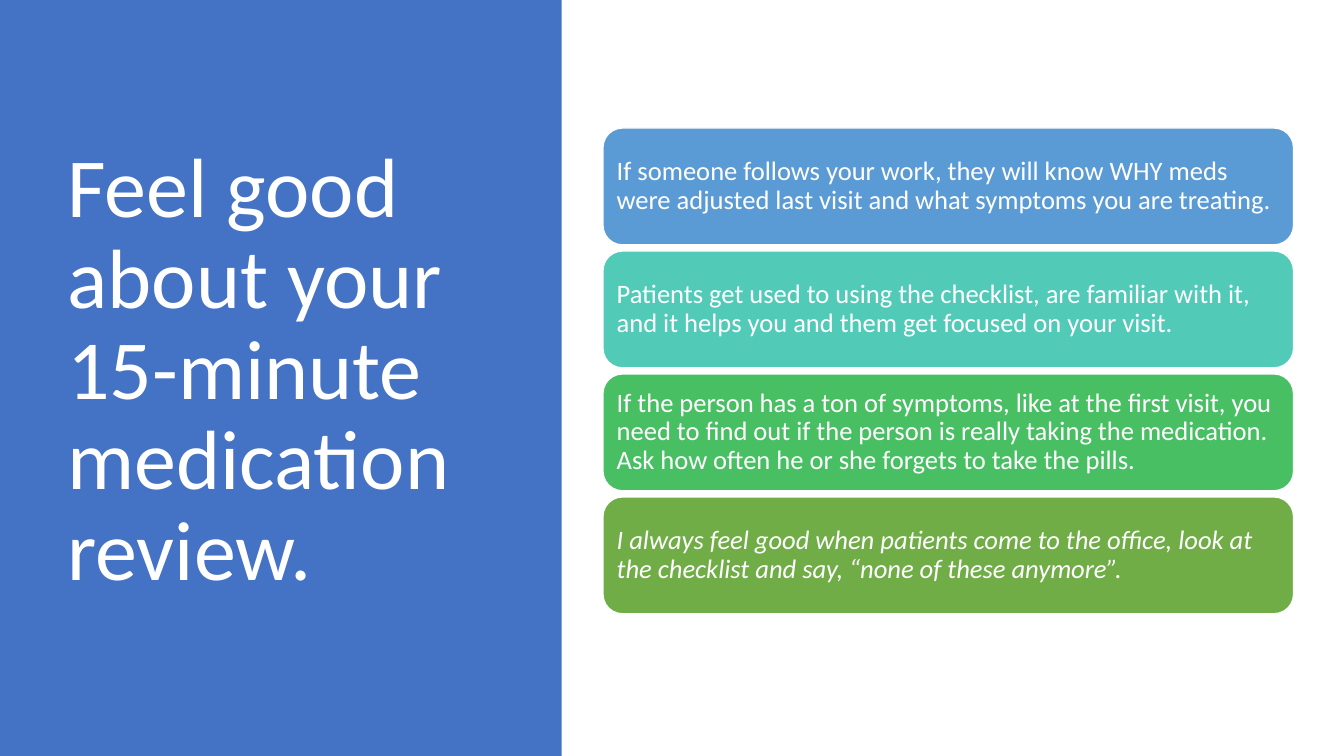
"""Build a slide with a title panel and four stacked message cards."""
import pptx
import pptx.dml.color
import pptx.enum.shapes
import pptx.enum.text
import pptx.util

Inches = pptx.util.Inches
SHAPES = pptx.enum.shapes.MSO_SHAPE


def color(value):
    return pptx.dml.color.RGBColor.from_string(value)


def write(shape, text, size, margins, italic=False):
    frame = shape.text_frame
    frame.word_wrap = True
    frame.vertical_anchor = pptx.enum.text.MSO_ANCHOR.MIDDLE
    frame.margin_left = frame.margin_right = Inches(margins[0])
    frame.margin_top = frame.margin_bottom = Inches(margins[1])
    para = frame.paragraphs[0]
    para.alignment = pptx.enum.text.PP_ALIGN.LEFT
    para.line_spacing = 0.9
    run = para.add_run()
    run.text = text
    run.font.name = "Calibri"
    run.font.size = pptx.util.Pt(size)
    run.font.italic = italic
    run.font.color.rgb = color("FFFFFF")


deck = pptx.Presentation()
deck.slide_width = Inches(13.33)
deck.slide_height = Inches(7.5)
page = deck.slides.add_slide(deck.slide_layouts[6])

panel = page.shapes.add_shape(SHAPES.RECTANGLE, 0, 0, Inches(5.57), Inches(7.5))
panel.shadow.inherit = False
panel.fill.solid()
panel.fill.fore_color.rgb = color("4472C4")
panel.line.fill.background()

title = page.shapes.add_textbox(Inches(0.57), Inches(0.68), Inches(4.16), Inches(6.02))
write(title, "Feel good about your 15-minute medication review.", 60, (0.1, 0.05))

messages = [
    ("5B9BD5", "If someone follows your work, they will know WHY meds were adjusted "
     "last visit and what symptoms you are treating.", False),
    ("52CAB8", "Patients get used to using the checklist, are familiar with it, "
     "and it helps you and them get focused on your visit.", False),
    ("49BF64", "If the person has a ton of symptoms, like at the first visit, you need "
     "to find out if the person is really taking the medication. "
     "Ask how often he or she forgets to take the pills.", False),
    ("70AD47", "I always feel good when patients come to the office, look at "
     "the checklist and say, “none of these anymore”.", True),
]
card_top, card_height, card_gap = 1.27, 1.16, 0.06
for index, (fill, text, italic) in enumerate(messages):
    top = card_top + index * (card_height + card_gap)
    card = page.shapes.add_shape(
        SHAPES.ROUNDED_RECTANGLE, Inches(5.98), Inches(top), Inches(6.85), Inches(card_height))
    card.shadow.inherit = False
    card.fill.solid()
    card.fill.fore_color.rgb = color(fill)
    card.line.color.rgb = color("FFFFFF")
    card.line.width = pptx.util.Pt(1)
    write(card, text, 19, (0.08, 0.08), italic)

deck.save("out.pptx")
